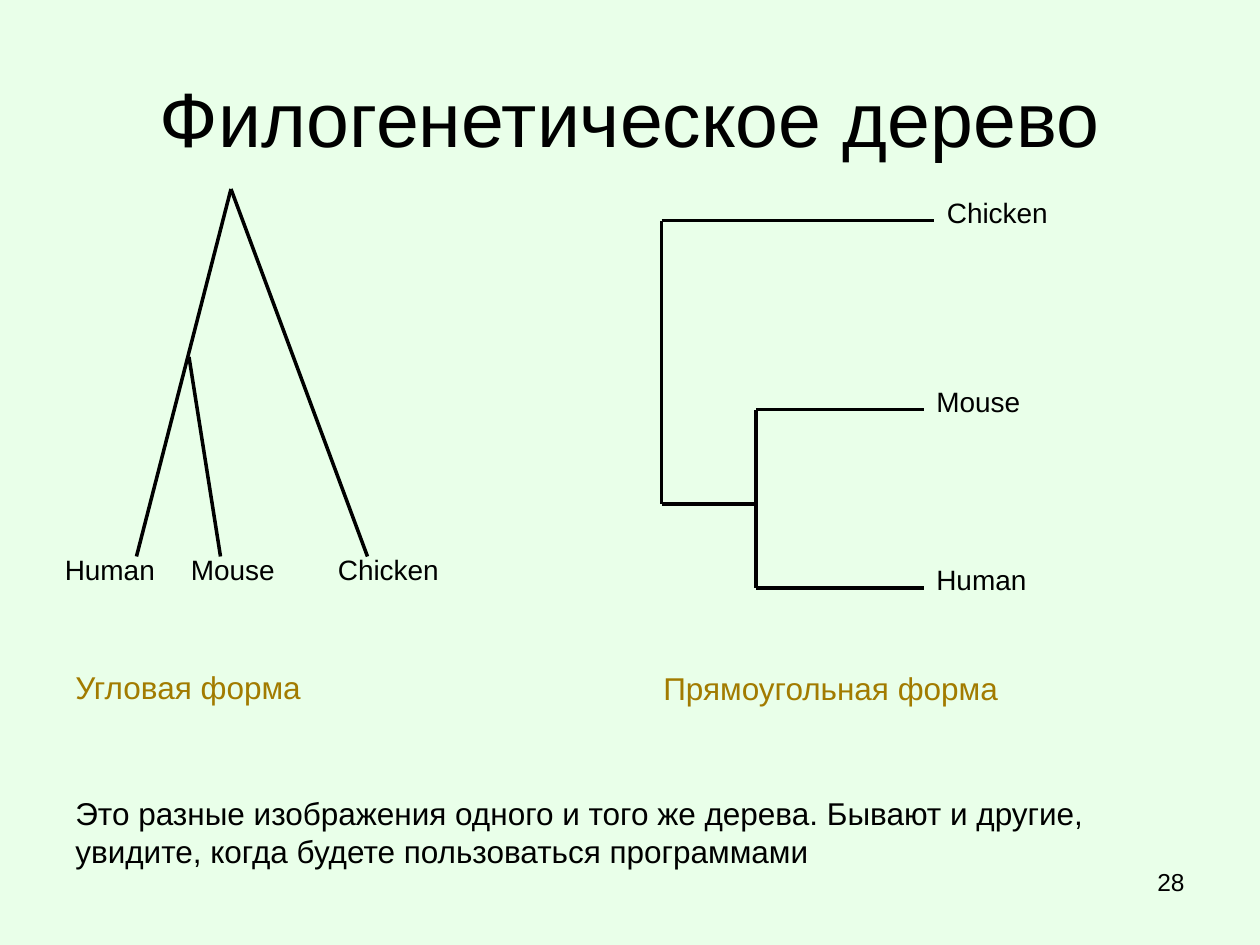
from pptx import Presentation
from pptx.dml.color import RGBColor
from pptx.enum.shapes import MSO_CONNECTOR
from pptx.enum.text import MSO_ANCHOR, PP_ALIGN
from pptx.oxml.ns import qn
from pptx.util import Inches, Pt
from lxml.etree import SubElement

MINT = RGBColor(0xE9, 0xFF, 0xE9)
BLACK = RGBColor(0, 0, 0)
OCHRE = RGBColor(0xA2, 0x7B, 0x00)
FONT = "Arial"
COLUMNS, ROWS = 120, 90

TITLE = "Филогенетическое дерево"
NOTE = ("Это разные изображения одного и того же дерева. Бывают и другие, "
        "увидите, когда будете пользоваться программами")
PAGE = "28"

ANGULAR_BRANCHES = [
    ((22, 18), (13, 53)),
    ((22, 18), (35, 53)),
    ((18, 34), (21, 53)),
]
RECTANGULAR_BRANCHES = [
    ((63, 21), (63, 48)),
    ((63, 21), (89, 21)),
    ((63, 48), (72, 48)),
    ((72, 39), (72, 56)),
    ((72, 39), (88, 39)),
    ((72, 56), (88, 56)),
]
SPECIES_WIDTHS = {"Human": 11, "Mouse": 15, "Chicken": 20}
SPECIES_LABELS = [
    ("Human", 5, 52), ("Mouse", 17, 52), ("Chicken", 31, 52),
    ("Human", 88, 53), ("Mouse", 88, 36), ("Chicken", 89, 18),
]
FORM_CAPTIONS = [("Угловая форма", 6, 63), ("Прямоугольная форма", 62, 63.1)]

prs = Presentation()
prs.slide_width, prs.slide_height = Inches(10), Inches(7.5)
column, row = prs.slide_width / COLUMNS, prs.slide_height / ROWS
slide = prs.slides.add_slide(prs.slide_layouts[5])
slide.background.fill.solid()
slide.background.fill.fore_color.rgb = MINT


def at(x, y):
    return round(x * column), round(y * row)


def write(text, x, y, width, height, holder=None, size=18, color=BLACK,
          align=PP_ALIGN.LEFT, anchor=MSO_ANCHOR.TOP):
    box = holder or slide.shapes.add_textbox(0, 0, 0, 0)
    box.left, box.top = at(x, y)
    box.width, box.height = at(width, height)
    frame = box.text_frame
    frame.word_wrap = True
    frame.vertical_anchor = anchor
    paragraph = frame.paragraphs[0]
    paragraph.alignment = align
    run = paragraph.add_run()
    run.text = text
    run.font.name, run.font.size = FONT, Pt(size)
    run.font.color.rgb = color


def draw_branch(start, end):
    branch = slide.shapes.add_connector(MSO_CONNECTOR.STRAIGHT, *at(*start), *at(*end))
    branch.line.color.rgb = BLACK
    branch.line.width = Pt(2)
    SubElement(branch._element.spPr, qn("a:effectLst"))


write(TITLE, 6, 3.6, 108, 15, holder=slide.shapes.title, size=44,
      align=PP_ALIGN.CENTER, anchor=MSO_ANCHOR.MIDDLE)
for start, end in ANGULAR_BRANCHES + RECTANGULAR_BRANCHES:
    draw_branch(start, end)
for species, x, y in SPECIES_LABELS:
    write(species, x, y, SPECIES_WIDTHS[species], 4.4, size=16)
for caption, x, y in FORM_CAPTIONS:
    write(caption, x, y, 41, 4.8, color=OCHRE)
write(PAGE, 86, 82, 28, 6.2, size=14, align=PP_ALIGN.RIGHT)
write(NOTE, 6, 75, 105.8, 8.5)

prs.save("out.pptx")
